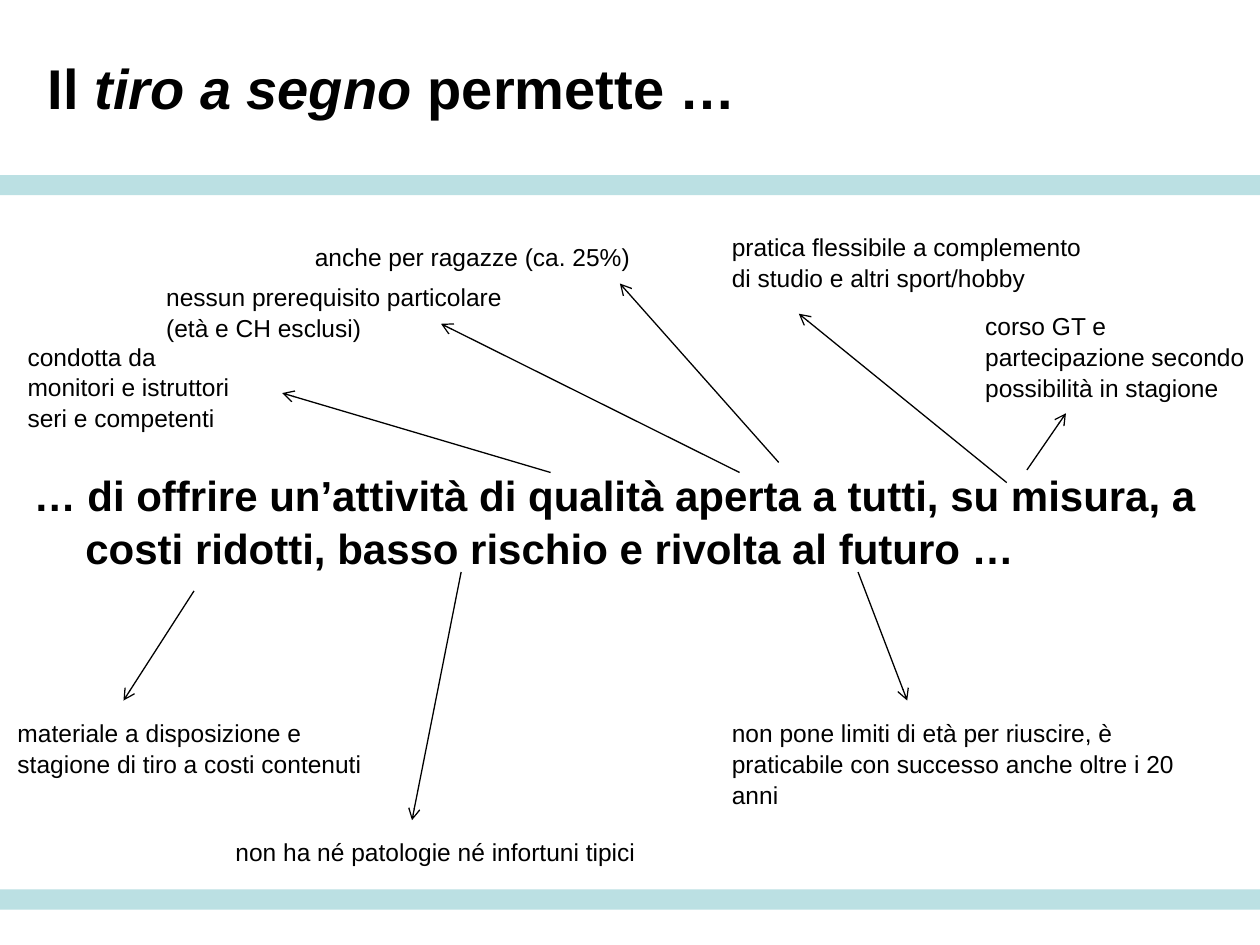
from dataclasses import dataclass
from typing import NamedTuple

from lxml import etree
from pptx import Presentation
from pptx.dml.color import RGBColor
from pptx.enum.shapes import MSO_CONNECTOR, MSO_SHAPE
from pptx.enum.text import MSO_ANCHOR
from pptx.oxml.ns import qn
from pptx.util import Emu, Inches, Pt

STRAIGHT = MSO_CONNECTOR.STRAIGHT
RECTANGLE = MSO_SHAPE.RECTANGLE
MIDDLE = MSO_ANCHOR.MIDDLE
TOP = MSO_ANCHOR.TOP

WIDTH, HEIGHT = Inches(10), Inches(7.5)
COLUMNS, ROWS = 100, 75


@dataclass(frozen=True)
class Theme:
    font: str = "Arial"
    ink: RGBColor = RGBColor(0, 0, 0)
    band: RGBColor = RGBColor(0xBB, 0xE0, 0xE3)
    title: int = 32
    statement: int = 24
    note: int = 14
    arrow: float = 0.75
    line_spacing: float = 1.05


THEME = Theme()


class Box(NamedTuple):
    """Position and size in grid columns and rows."""
    column: float
    row: float
    columns: float
    rows: float


class Run(NamedTuple):
    text: str
    italic: bool = False


class Note(NamedTuple):
    """A comment and the arrow leading to it from the statement."""
    text: str
    box: Box
    start: tuple[float, float]
    end: tuple[float, float]
    wrap: bool = True


BANDS = [Box(0, row, COLUMNS, 1.6) for row in (13.9, 70.6)]

TITLE = [Run("Il "), Run("tiro a segno ", italic=True), Run("permette …")]
STATEMENT = [Run("… di offrire un’attività di qualità aperta a tutti, su misura, "
                 "a costi ridotti, basso rischio e rivolta al futuro …")]

NOTES = [
    Note("condotta da monitori e istruttori seri e competenti",
         Box(1.2, 26.5, 18.1, 8.1), (43.7, 37.5), (22.4, 31.2)),
    Note("nessun prerequisito particolare\n(età e CH esclusi)",
         Box(12.2, 21.8, 29.9, 5.7), (58.7, 37.5), (35, 25.7)),
    Note("anche per ragazze (ca. 25%)",
         Box(24, 18.6, 27.1, 3.4), (61.8, 36.7), (49.2, 22.5), wrap=False),
    Note("pratica flessibile a complemento di studio e altri sport/hobby",
         Box(57.1, 17.8, 30.7, 5.7), (79.9, 38.3), (63.4, 24.9)),
    Note("corso GT e partecipazione secondo possibilità in stagione",
         Box(77.2, 24.1, 22.8, 8.1), (81.5, 37.3), (84.6, 32.8)),
    Note("materiale a disposizione e stagione di tiro a costi contenuti",
         Box(0.4, 56.4, 29.9, 5.7), (15.4, 46.9), (9.8, 55.6)),
    Note("non ha né patologie né infortuni tipici",
         Box(17.7, 65.8, 34.6, 3.4), (36.6, 45.4), (32.7, 65.1)),
    Note("non pone limiti di età per riuscire, è praticabile con successo "
         "anche oltre i 20 anni",
         Box(57.1, 56.4, 41.2, 5.7), (68.1, 45.4), (72, 55.6)),
]


def across(columns: float) -> Emu:
    return Emu(round(WIDTH * columns / COLUMNS))


def down(rows: float) -> Emu:
    return Emu(round(HEIGHT * rows / ROWS))


def place(box: Box) -> tuple[Emu, Emu, Emu, Emu]:
    return across(box.column), down(box.row), across(box.columns), down(box.rows)


def add_band(slide, box: Box) -> None:
    shape = slide.shapes.add_shape(RECTANGLE, *place(box))
    shape.shadow.inherit = False
    shape.fill.solid()
    shape.fill.fore_color.rgb = THEME.band
    shape.line.fill.background()


def add_text(slide, box: Box, runs: list[Run], size: int, bold: bool = False,
             anchor=TOP, wrap: bool = True, hanging: float = 0) -> None:
    frame = slide.shapes.add_textbox(*place(box)).text_frame
    frame.word_wrap = wrap
    frame.vertical_anchor = anchor
    paragraph = frame.paragraphs[0]
    paragraph.line_spacing = THEME.line_spacing
    if hanging:
        properties = paragraph._p.get_or_add_pPr()
        properties.set("marL", str(across(hanging)))
        properties.set("indent", str(-across(hanging)))
    for text, italic in runs:
        for index, line in enumerate(text.split("\n")):
            if index:
                paragraph.add_line_break()
            run = paragraph.add_run()
            run.text = line
            run.font.name = THEME.font
            run.font.size = Pt(size)
            run.font.bold = bold
            run.font.italic = italic
            run.font.color.rgb = THEME.ink


def add_arrow(slide, start: tuple[float, float], end: tuple[float, float]) -> None:
    connector = slide.shapes.add_connector(
        STRAIGHT, across(start[0]), down(start[1]), across(end[0]), down(end[1]))
    connector.line.color.rgb = THEME.ink
    connector.line.width = Pt(THEME.arrow)
    etree.SubElement(connector.line._get_or_add_ln(), qn("a:tailEnd"), type="arrow")
    etree.SubElement(connector._element.spPr, qn("a:effectLst"))


def main() -> None:
    presentation = Presentation()
    presentation.slide_width, presentation.slide_height = WIDTH, HEIGHT
    slide = presentation.slides.add_slide(presentation.slide_layouts[6])

    # Bands framing the content
    for band in BANDS:
        add_band(slide, band)

    # Title and central statement
    add_text(slide, Box(2.8, 0.5, 85.1, 12.5), TITLE, THEME.title, bold=True, anchor=MIDDLE)
    add_text(slide, Box(1.7, 36.6, 96.6, 9.1), STATEMENT, THEME.statement,
             bold=True, hanging=4.1)

    # Notes around the statement, each with its arrow
    for note in NOTES:
        add_arrow(slide, note.start, note.end)
        add_text(slide, note.box, [Run(note.text)], THEME.note, wrap=note.wrap)

    presentation.save("out.pptx")


if __name__ == "__main__":
    main()
